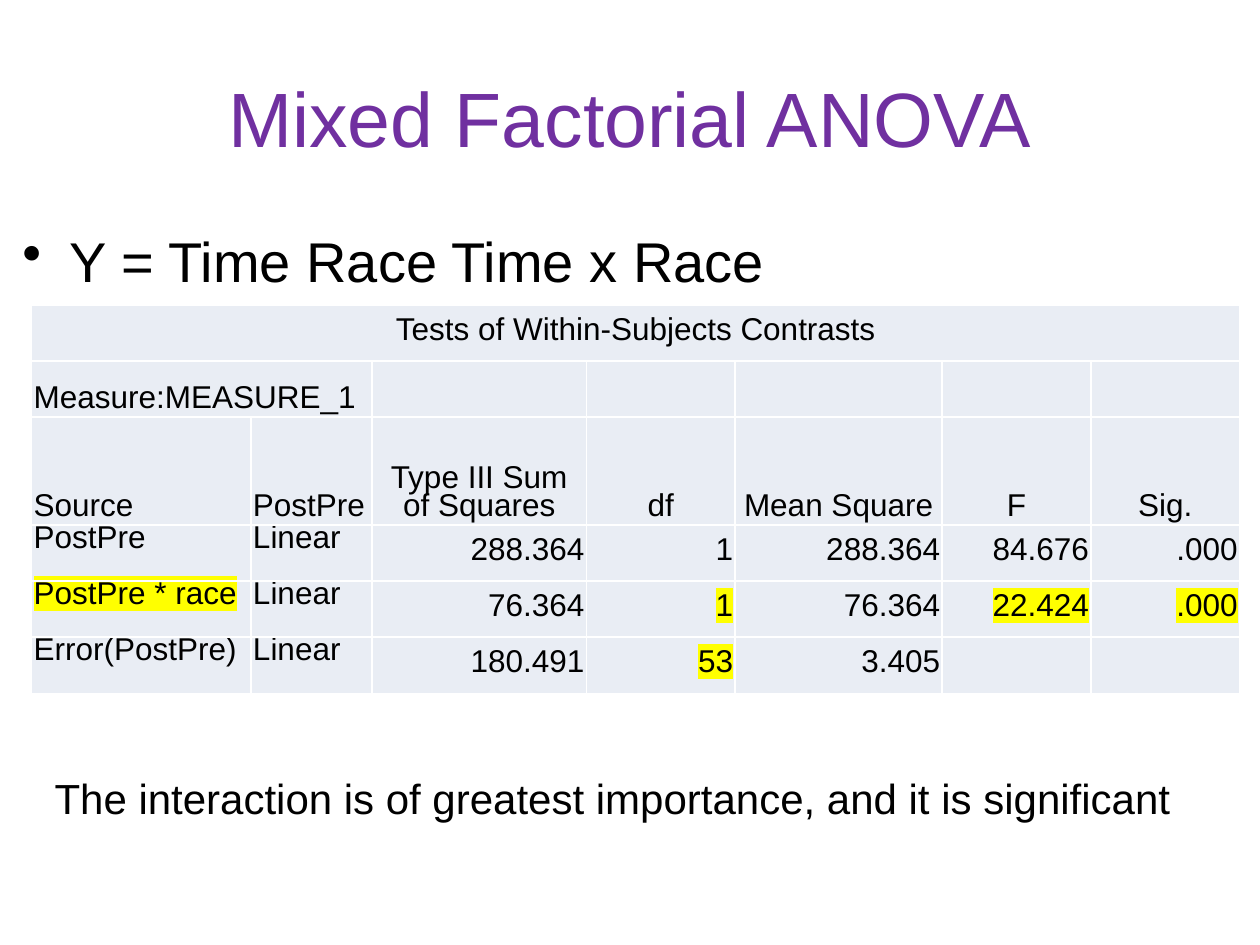
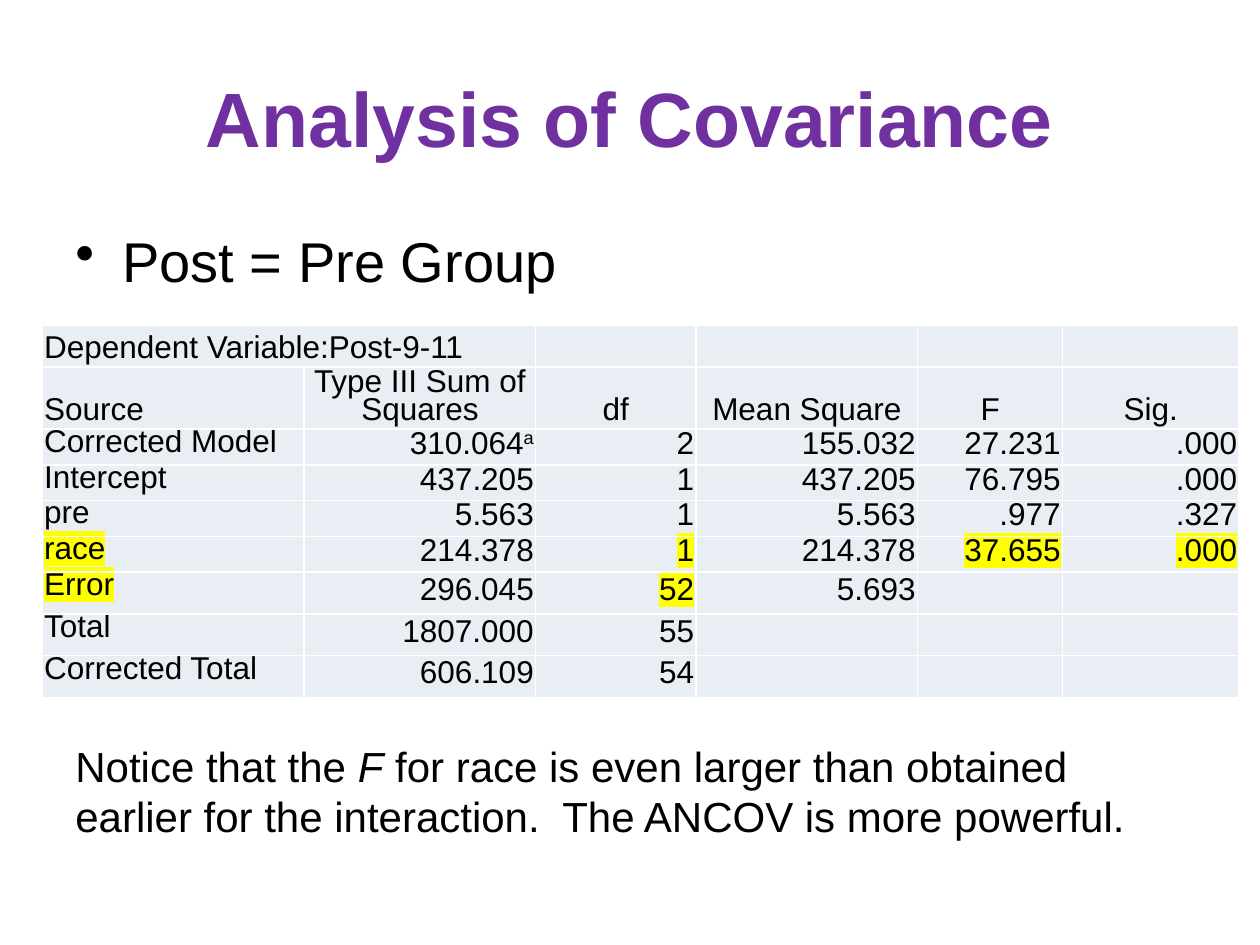
from lxml import etree
from pptx import Presentation
from pptx.dml.color import RGBColor
from pptx.enum.text import MSO_ANCHOR, MSO_AUTO_SIZE, PP_ALIGN
from pptx.oxml.ns import qn
from pptx.util import Cm, Pt

LEFT, CENTER, RIGHT = PP_ALIGN.LEFT, PP_ALIGN.CENTER, PP_ALIGN.RIGHT
TOP, MIDDLE, BOTTOM = MSO_ANCHOR.TOP, MSO_ANCHOR.MIDDLE, MSO_ANCHOR.BOTTOM
FIT_SHAPE = MSO_AUTO_SIZE.SHAPE_TO_FIT_TEXT

FONT = "Arial"
PURPLE = "7030A0"
BLACK = "000000"
CELL_FILL = "E9EDF4"
YELLOW = "FFFF00"
CELL_INSET = Cm(0.04)
BULLET_INDENT = Cm(0.95)


def color(hex_code):
    return RGBColor.from_string(hex_code)


def style_span(span, style):
    properties = span._r.get_or_add_rPr()
    if style == "italic":
        span.font.italic = True
    elif style == "superscript":
        properties.set("baseline", "30000")
    elif style == "highlight":
        highlight = etree.SubElement(properties, qn("a:highlight"))
        etree.SubElement(highlight, qn("a:srgbClr"), val=YELLOW)


def write(para, content, size, hex_code=BLACK, align=LEFT, bold=False):
    para.alignment = align
    para.font.name = FONT
    para.font.size = Pt(size)
    para.font.bold = bold
    para.font.color.rgb = color(hex_code)
    spans = [(content, None)] if isinstance(content, str) else content
    for text, style in spans:
        span = para.add_run()
        span.text = text
        style_span(span, style)


def add_text_box(page, left, top, width, height, anchor=TOP, wrap=True):
    box = page.shapes.add_textbox(Cm(left), Cm(top), Cm(width), Cm(height))
    frame = box.text_frame
    frame.word_wrap = wrap
    frame.vertical_anchor = anchor
    return frame


def add_title(page, text, bold=False):
    frame = add_text_box(page, 1.27, 0.76, 22.86, 3.18, MIDDLE)
    write(frame.paragraphs[0], text, 44, PURPLE, CENTER, bold)


def add_bullet(page, text, left, width):
    para = add_text_box(page, left, 4.45, width, 1.9).paragraphs[0]
    write(para, text, 32)
    para.space_before = Pt(6.4)
    properties = para._p.get_or_add_pPr()
    properties.set("marL", str(BULLET_INDENT))
    properties.set("indent", str(-BULLET_INDENT))
    bullet = etree.Element(qn("a:buChar"), char="•")
    properties.find(qn("a:defRPr")).addprevious(bullet)


def add_comment(page, content, left, top, width, height, wrap=True):
    frame = add_text_box(page, left, top, width, height, wrap=wrap)
    frame.auto_size = FIT_SHAPE
    write(frame.paragraphs[0], content, 24)


def marked(text):
    return [(text, "highlight")]


def cell_layout(row, column, header_row, label_columns):
    is_label = column < label_columns
    if row <= header_row:
        return BOTTOM, LEFT if is_label else CENTER
    return (TOP, LEFT) if is_label else (MIDDLE, RIGHT)


def add_anova_table(page, left, top, widths, heights, rows, spans, label_columns):
    table = page.shapes.add_table(
        len(heights), len(widths), Cm(left), Cm(top),
        Cm(sum(widths)), Cm(sum(heights))).table
    table.first_row = False
    table.horz_banding = False
    for column, width in zip(table.columns, widths):
        column.width = Cm(width)
    for row, height in zip(table.rows, heights):
        row.height = Cm(height)
    for row, span in enumerate(spans):
        table.cell(row, 0).merge(table.cell(row, span - 1))

    for row in range(len(heights)):
        for column in range(len(widths)):
            cell = table.cell(row, column)
            cell.fill.solid()
            cell.fill.fore_color.rgb = color(CELL_FILL)
            cell.margin_left = cell.margin_right = CELL_INSET
            cell.margin_top = cell.margin_bottom = CELL_INSET
            anchor, align = cell_layout(row, column, len(spans), label_columns)
            if row < len(spans) and spans[row] == len(widths):
                anchor, align = MIDDLE, CENTER
            cell.vertical_anchor = anchor
            para = cell.text_frame.paragraphs[0]
            para.line_spacing = Pt(16)
            content = rows[row][column] if column < len(rows[row]) else []
            write(para, content, 18, align=align)


def build_mixed_anova(page):
    add_title(page, "Mixed Factorial ANOVA")
    add_bullet(page, "Y = Time Race Time x Race", 0.2, 25.2)
    rows = [
        ["Tests of Within-Subjects Contrasts"],
        ["Measure:MEASURE_1"],
        ["Source", "PostPre", "Type III Sum of Squares", "df",
         "Mean Square", "F", "Sig."],
        ["PostPre", "Linear", "288.364", "1", "288.364", "84.676", ".000"],
        [marked("PostPre * race"), "Linear", "76.364", marked("1"),
         "76.364", marked("22.424"), marked(".000")],
        ["Error(PostPre)", "Linear", "180.491", marked("53"), "3.405"],
    ]
    widths = [4.42, 2.44, 4.32, 3, 4.17, 3, 3]
    heights = [1.13, 1.13, 2.18] + [1.13] * 3
    add_anova_table(page, 0.64, 6.15, widths, heights, rows, [7, 2], 2)
    add_comment(
        page, "The interaction is of greatest importance, and it is significant",
        0.85, 15.45, 23.24, 1.28, wrap=False)


def build_covariance(page):
    add_title(page, "Analysis of Covariance", bold=True)
    add_bullet(page, "Post = Pre Group", 1.27, 22.86)
    rows = [
        ["Dependent Variable:Post-9-11"],
        ["Source", "Type III Sum of Squares", "df", "Mean Square", "F", "Sig."],
        ["Corrected Model", [("310.064", None), ("a", "superscript")], "2",
         "155.032", "27.231", ".000"],
        ["Intercept", "437.205", "1", "437.205", "76.795", ".000"],
        ["pre", "5.563", "1", "5.563", ".977", ".327"],
        [marked("race"), "214.378", marked("1"), "214.378",
         marked("37.655"), marked(".000")],
        [marked("Error"), "296.045", marked("52"), "5.693"],
        ["Total", "1807.000", "55"],
        ["Corrected Total", "606.109", "54"],
    ]
    widths = [5.28, 4.67, 3.23, 4.47, 2.92, 3.56]
    heights = [0.81, 1.25] + [0.72] * 4 + [0.81] * 3
    add_anova_table(page, 0.85, 6.56, widths, heights, rows, [2], 1)
    add_comment(
        page,
        [("Notice that the ", None), ("F", "italic"),
         (" for race is even larger than obtained earlier for the interaction.  "
          "The ANCOV is more powerful.", None)],
        1.27, 14.8, 23.06, 2.31)


def main():
    deck = Presentation()
    deck.slide_width = Cm(25.4)
    deck.slide_height = Cm(19.05)
    blank = deck.slide_layouts[6]
    for build in (build_mixed_anova, build_covariance):
        build(deck.slides.add_slide(blank))
    deck.save("out.pptx")


if __name__ == "__main__":
    main()
